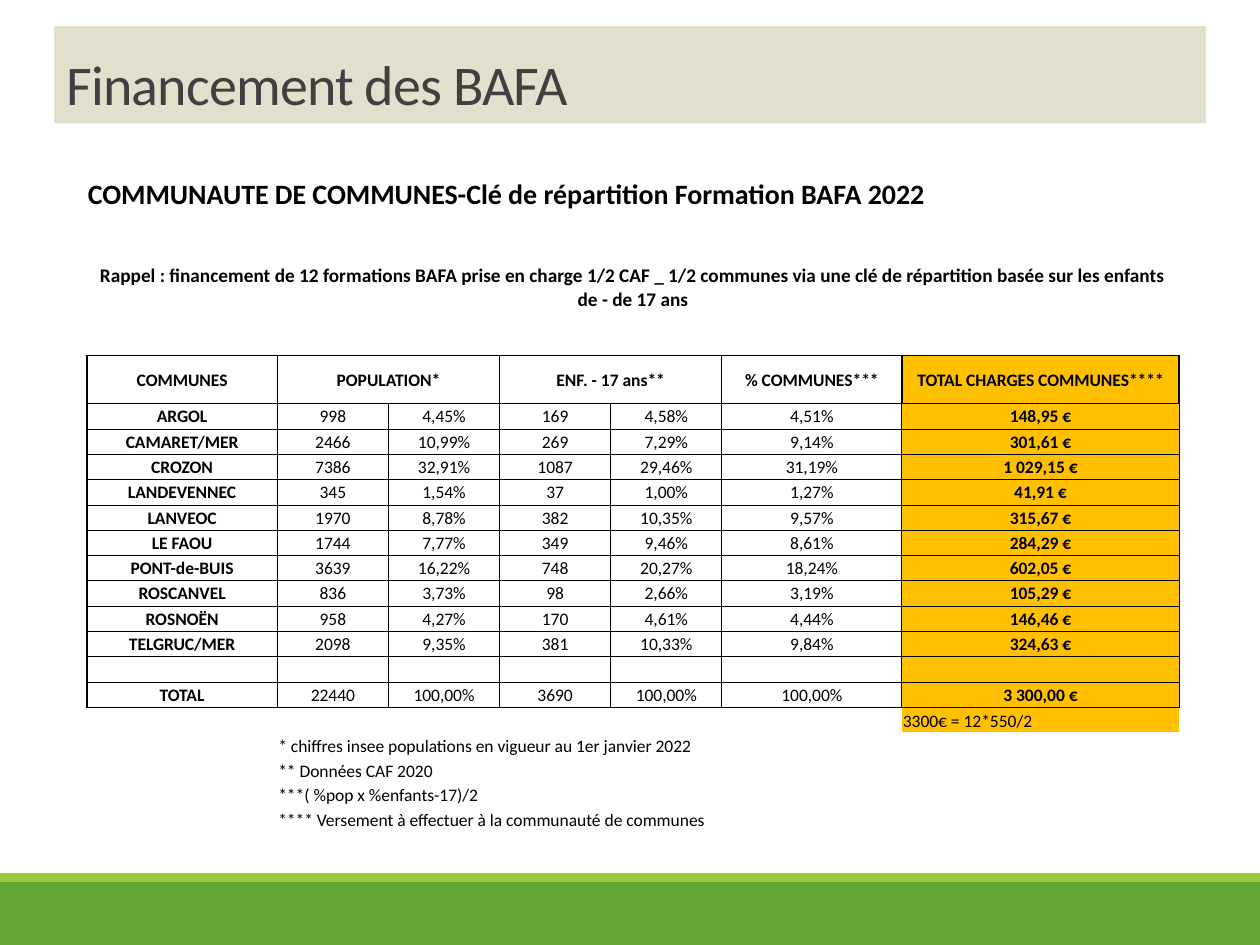
from lxml import etree
from pptx import Presentation
from pptx import util as u
from pptx.dml.color import RGBColor
from pptx.enum import shapes, text
from pptx.oxml.ns import qn

COLORS = {"ink": "000000", "title": "404040", "band": "E2DFCC", "gold": "FFC000",
          "green": "63A537", "lime": "99CB38"}
FONT = "Calibri"

TITLE = "Financement des BAFA"
HEADING = "COMMUNAUTE DE COMMUNES-Clé de répartition Formation BAFA 2022"
REMINDER = ("Rappel : financement de 12 formations BAFA prise en charge 1/2 CAF _ 1/2 communes "
            "via une clé de répartition basée sur les enfants de - de 17 ans")
HEADER = ["COMMUNES", "POPULATION*", "", "ENF. - 17 ans**", "", "% COMMUNES***",
          "TOTAL CHARGES COMMUNES****"]
COMMUNES = [
    ("ARGOL", "998", "4,45%", "169", "4,58%", "4,51%", "148,95 €"),
    ("CAMARET/MER", "2466", "10,99%", "269", "7,29%", "9,14%", "301,61 €"),
    ("CROZON", "7386", "32,91%", "1087", "29,46%", "31,19%", "1 029,15 €"),
    ("LANDEVENNEC", "345", "1,54%", "37", "1,00%", "1,27%", "41,91 €"),
    ("LANVEOC", "1970", "8,78%", "382", "10,35%", "9,57%", "315,67 €"),
    ("LE FAOU", "1744", "7,77%", "349", "9,46%", "8,61%", "284,29 €"),
    ("PONT-de-BUIS", "3639", "16,22%", "748", "20,27%", "18,24%", "602,05 €"),
    ("ROSCANVEL", "836", "3,73%", "98", "2,66%", "3,19%", "105,29 €"),
    ("ROSNOËN", "958", "4,27%", "170", "4,61%", "4,44%", "146,46 €"),
    ("TELGRUC/MER", "2098", "9,35%", "381", "10,33%", "9,84%", "324,63 €"),
]
TOTAL = ("TOTAL", "22440", "100,00%", "3690", "100,00%", "100,00%", "3 300,00 €")
CALCULATION = "3300€ = 12*550/2"
NOTES = [  # wording, columns spanned
    ("* chiffres insee populations en vigueur au 1er janvier 2022", 5),
    ("** Données CAF 2020", 2),
    ("***( %pop x %enfants-17)/2", 3),
    ("**** Versement à effectuer à la communauté de communes", 5),
]

BLANK = ("",) * 7
GRID = [HEADER, *COMMUNES, BLANK, TOTAL]
HEADER_ROW = 3
CALCULATION_ROW = HEADER_ROW + len(GRID)
ROW_COUNT = CALCULATION_ROW + 1 + len(NOTES)
LAST_COLUMN = 6
COLUMN_WIDTHS = [3.84, 2.24, 2.24, 2.24, 2.24, 3.63, 5.59]
ROW_HEIGHTS = ([1.4, 1.68, 0.53, 0.97] + [0.51] * (len(GRID) - 1)
               + [0.5] * (1 + len(NOTES)))


def write(frame, wording, size=10, bold=False, color="ink", align="LEFT", spacing=None,
          tracking=None):
    paragraph = frame.paragraphs[0]
    paragraph.alignment = getattr(text.PP_ALIGN, align)
    if spacing:
        paragraph.line_spacing = spacing
    run = paragraph.add_run()
    run.text = wording
    run.font.name, run.font.size, run.font.bold = FONT, u.Pt(size), bold
    run.font.color.rgb = RGBColor.from_string(COLORS[color])
    if tracking:
        run.font._element.set("spc", str(int(tracking * 100)))


def add_band(slide, left, top, width, height, color):
    band = slide.shapes.add_shape(shapes.MSO_SHAPE.RECTANGLE, u.Cm(left), u.Cm(top),
                                  u.Cm(width), u.Cm(height))
    band.shadow.inherit = False
    band.fill.solid()
    band.fill.fore_color.rgb = RGBColor.from_string(COLORS[color])
    band.line.fill.background()
    return band


def set_borders(cell, widths):
    """Draw the left, right, top and bottom edges; a width of 0 hides the edge."""
    properties = cell._tc.get_or_add_tcPr()
    for side, width in zip("LRTB", widths):
        line = etree.SubElement(properties, qn(f"a:ln{side}"), w=str(u.Pt(width)))
        if width:
            fill = etree.SubElement(line, qn("a:solidFill"))
            etree.SubElement(fill, qn("a:srgbClr"), val=COLORS["ink"])
        else:
            etree.SubElement(line, qn("a:noFill"))


def border_widths(row, column):
    def horizontal(edge):
        if edge < HEADER_ROW or edge > CALCULATION_ROW:
            return 0
        return 1 if edge in (HEADER_ROW, HEADER_ROW + 1, CALCULATION_ROW) else 0.5

    def vertical(edge):
        if not HEADER_ROW <= row < CALCULATION_ROW:
            return 0
        heavy = edge == 0 or (row == HEADER_ROW and edge >= LAST_COLUMN)
        return 1 if heavy else 0.5

    return vertical(column), vertical(column + 1), horizontal(row), horizontal(row + 1)


def format_cell(cell, row, column):
    cell.margin_left = cell.margin_right = cell.margin_top = u.Cm(0.02)
    cell.margin_bottom = 0
    cell.vertical_anchor = (text.MSO_ANCHOR.BOTTOM if row >= CALCULATION_ROW
                            else text.MSO_ANCHOR.MIDDLE)
    if not cell.is_spanned:
        set_borders(cell, border_widths(row, column))
    if column == LAST_COLUMN and HEADER_ROW <= row <= CALCULATION_ROW:
        cell.fill.solid()
        cell.fill.fore_color.rgb = RGBColor.from_string(COLORS["gold"])
    else:
        cell.fill.background()
    if not cell.text_frame.text:
        ending = etree.SubElement(cell.text_frame.paragraphs[0]._p, qn("a:endParaRPr"))
        ending.set("sz", "1000")


def add_cost_table(slide):
    frame = slide.shapes.add_table(ROW_COUNT, len(COLUMN_WIDTHS), u.Cm(1.75), u.Cm(3.56),
                                   u.Cm(sum(COLUMN_WIDTHS)), u.Cm(sum(ROW_HEIGHTS)))
    table = frame.table
    table.first_row = table.horz_banding = False
    for column, width in zip(table.columns, COLUMN_WIDTHS):
        column.width = u.Cm(width)
    for row, height in zip(table.rows, ROW_HEIGHTS):
        row.height = u.Cm(height)

    spans = [(0, 0, 7), (1, 0, 7), (HEADER_ROW, 1, 2), (HEADER_ROW, 3, 2)]
    spans += [(CALCULATION_ROW + 1 + i, 1, span) for i, (_, span) in enumerate(NOTES)]
    for row, column, span in spans:
        table.cell(row, column).merge(table.cell(row, column + span - 1))

    write(table.cell(0, 0).text_frame, HEADING, size=16, bold=True)
    write(table.cell(1, 0).text_frame, REMINDER, size=11, bold=True, align="CENTER")
    for row, values in enumerate(GRID, HEADER_ROW):
        for column, value in enumerate(values):
            if value:
                bold = row == HEADER_ROW or column in (0, LAST_COLUMN)
                write(table.cell(row, column).text_frame, value, bold=bold, align="CENTER")
    write(table.cell(CALCULATION_ROW, LAST_COLUMN).text_frame, CALCULATION)
    for row, (note, _) in enumerate(NOTES, CALCULATION_ROW + 1):
        write(table.cell(row, 1).text_frame, note)

    for row in range(ROW_COUNT):
        for column in range(len(COLUMN_WIDTHS)):
            format_cell(table.cell(row, column), row, column)
    table.cell(0, 0).vertical_anchor = text.MSO_ANCHOR.TOP


def main():
    presentation = Presentation()
    presentation.slide_width, presentation.slide_height = u.Cm(25.4), u.Cm(19.05)
    slide = presentation.slides.add_slide(presentation.slide_layouts[6])
    add_band(slide, 0, 17.78, 25.4, 1.27, "green")
    add_band(slide, 0, 17.6, 25.4, 0.18, "lime")
    title = add_band(slide, 1.09, 0.53, 23.22, 1.96, "band")
    title.text_frame.word_wrap = True
    title.text_frame.vertical_anchor = text.MSO_ANCHOR.BOTTOM
    write(title.text_frame, TITLE, size=32, color="title", spacing=0.85, tracking=-0.5)
    add_cost_table(slide)
    presentation.save("out.pptx")


if __name__ == "__main__":
    main()
